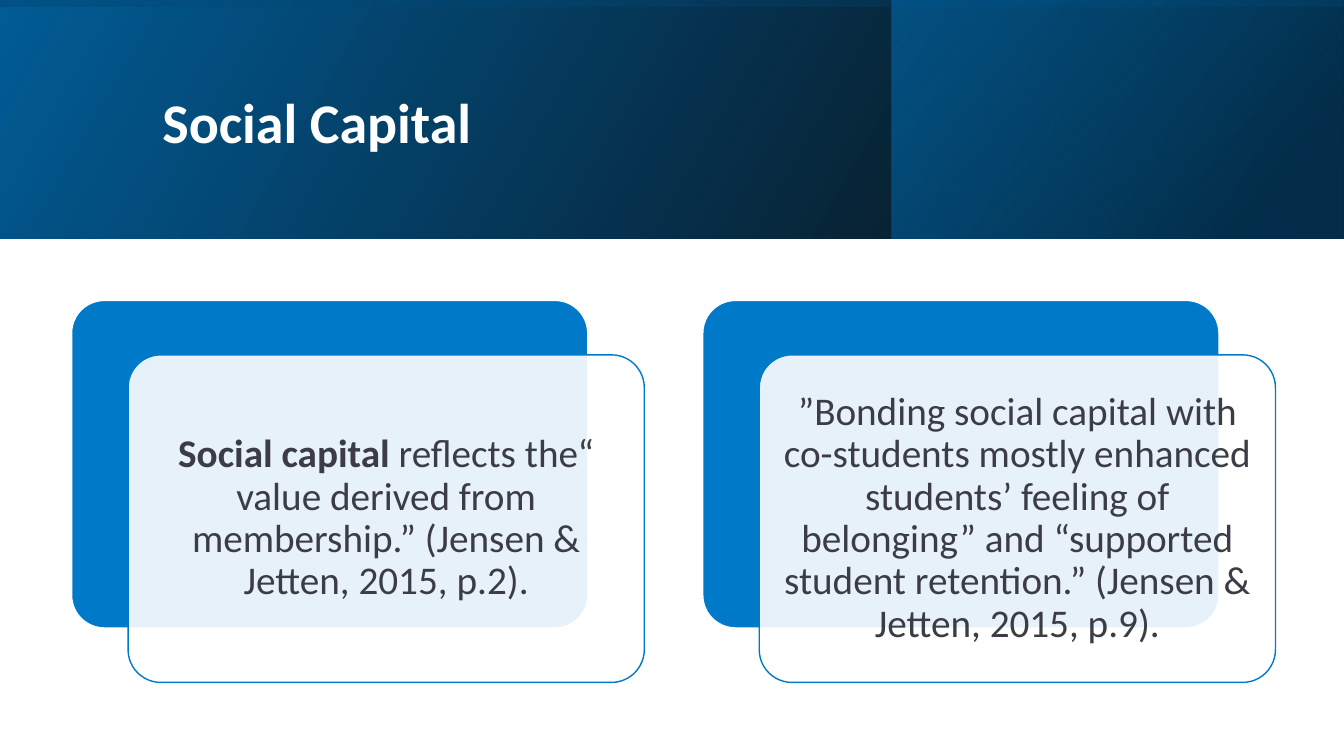
"""Build the Social Capital slide: a gradient banner above two layered quote cards."""
from lxml import etree
from pptx import Presentation
from pptx.dml.color import RGBColor
from pptx.enum import shapes, text
from pptx.oxml import ns
from pptx.util import Inches, Pt

TITLE = "Social Capital"
CARDS = [
    [("Social capital ", True),
     ("reflects the“ value derived from membership.” (Jensen & Jetten, 2015, p.2).", False)],
    [("”Bonding social capital with co-students mostly enhanced students’ feeling of "
      "belonging” and “supported student retention.” (Jensen & Jetten, 2015, p.9).", False)],
]
WIDTH, HEIGHT, BANNER = 13.33, 7.5, 2.37
BANNER_LAYERS = [
    {"at": (0, 0, WIDTH, BANNER), "turn": 0, "angle": 30,
     "stops": [(0, "000000", 96), (100, "005C96", 100)]},
    {"at": (8.84, 0, 4.48, BANNER), "turn": 0, "angle": 40,
     "stops": [(19, "003D64", 68), (100, "007AC8", 48)]},
    {"at": ((WIDTH - BANNER) / 2, (BANNER - WIDTH) / 2, BANNER, WIDTH), "turn": 270, "angle": 10,
     "stops": [(23, "005C96", 16), (99, "000000", 45)]},
]
CARD_LEFT, CARD_TOP, CARD_WIDTH, CARD_HEIGHT = 0.71, 2.98, 5.12, 3.25
CARD_STEP, FRONT_RIGHT, FRONT_DOWN = 6.26, 0.56, 0.54
BLUE, WHITE, INK = "007AC8", "FFFFFF", "3C3C47"
FRAME = {"word_wrap": True, "vertical_anchor": text.MSO_ANCHOR.MIDDLE}
INSETS = {f"margin_{side}": Inches(0.12) for side in ("left", "right", "top", "bottom")}


def paint(color, value, opacity=100):
    color.rgb = RGBColor.from_string(value)
    if opacity < 100:
        for node in color._xFill.iter(ns.qn("a:srgbClr")) if hasattr(color, "_xFill") else ():
            etree.SubElement(node, ns.qn("a:alpha")).set("val", str(opacity * 1000))


def fade(node, opacity):
    etree.SubElement(node, ns.qn("a:alpha")).set("val", str(opacity * 1000))


def apply(target, values):
    for name, value in values.items():
        setattr(target, name, value)


def add_box(page, kind, at):
    box = page.shapes.add_shape(kind, *map(Inches, at))
    box.shadow.inherit = False
    return box


def add_banner_layer(page, layer):
    box = add_box(page, shapes.MSO_SHAPE.RECTANGLE, layer["at"])
    box.rotation = layer["turn"]
    box._element.spPr.find(ns.qn("a:xfrm")).set("flipH", "1")
    box.line.fill.background()
    box.fill.gradient()
    box.fill.gradient_angle = layer["angle"]
    for stop, (position, color, opacity) in zip(box.fill.gradient_stops, layer["stops"]):
        stop.position = position / 100
        paint(stop.color, color)
    nodes = box._element.spPr.iter(ns.qn("a:srgbClr"))
    for node, (_, _, opacity) in zip(list(nodes), layer["stops"]):
        fade(node, opacity)


def add_panel(page, left, top, fill, line):
    box = add_box(page, shapes.MSO_SHAPE.ROUNDED_RECTANGLE, (left, top, CARD_WIDTH, CARD_HEIGHT))
    box.adjustments[0] = 0.1
    box.fill.solid()
    paint(box.fill.fore_color, fill)
    paint(box.line.color, line)
    box.line.width = Pt(1)
    return box


def write(frame, spans, size, color, align):
    apply(frame, FRAME)
    para = frame.paragraphs[0]
    apply(para, {"alignment": align, "line_spacing": 0.9})
    for words, bold in spans:
        span = para.add_run()
        span.text = words
        apply(span.font, {"name": "Calibri", "size": Pt(size), "bold": bold})
        paint(span.font.color, color)


def main():
    deck = Presentation()
    apply(deck, {"slide_width": Inches(WIDTH), "slide_height": Inches(HEIGHT)})
    page = deck.slides.add_slide(deck.slide_layouts[5])
    for layer in BANNER_LAYERS:
        add_banner_layer(page, layer)

    title = page.shapes.title
    apply(title, {"left": Inches(1.51), "top": Inches(0.38),
                  "width": Inches(10.63), "height": Inches(1.72)})
    write(title.text_frame, [(TITLE, True)], 40, WHITE, text.PP_ALIGN.LEFT)
    page.shapes._spTree.append(title._element)

    for index, spans in enumerate(CARDS):
        left = CARD_LEFT + index * CARD_STEP
        add_panel(page, left, CARD_TOP, BLUE, WHITE)
        front = add_panel(page, left + FRONT_RIGHT, CARD_TOP + FRONT_DOWN, WHITE, BLUE)
        fade(front._element.spPr.find(ns.qn("a:solidFill"))[0], 90)
        apply(front.text_frame, INSETS)
        write(front.text_frame, spans, 28, INK, text.PP_ALIGN.CENTER)
    deck.save("out.pptx")


if __name__ == "__main__":
    main()
